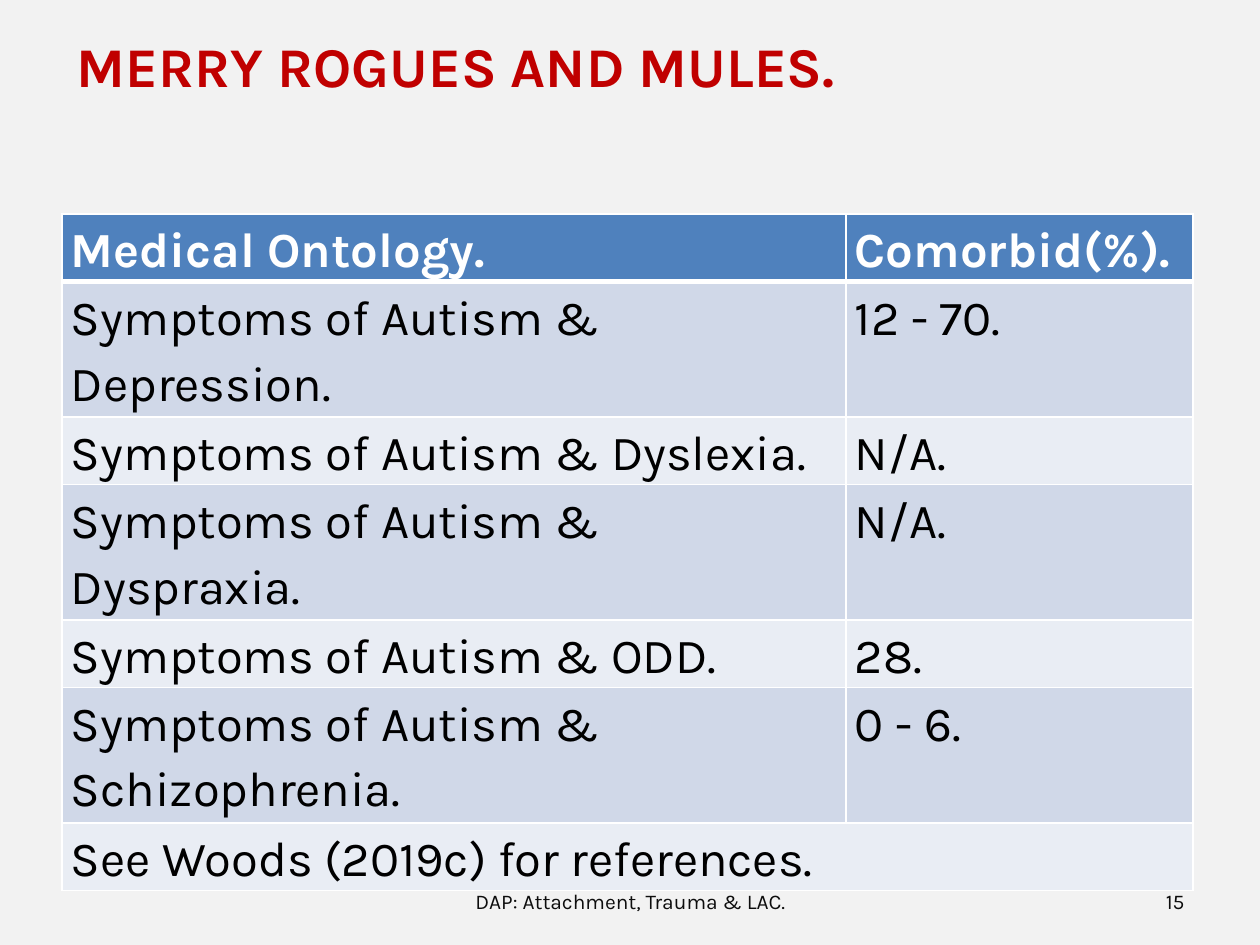
from lxml import etree
from pptx import Presentation
from pptx.dml.color import RGBColor
from pptx.enum.text import MSO_ANCHOR, MSO_AUTO_SIZE, PP_ALIGN
from pptx.oxml.ns import qn
from pptx.util import Emu, Pt

LEFT, CENTER, RIGHT = PP_ALIGN.LEFT, PP_ALIGN.CENTER, PP_ALIGN.RIGHT
TOP, MIDDLE = MSO_ANCHOR.TOP, MSO_ANCHOR.MIDDLE
GROW = MSO_AUTO_SIZE.SHAPE_TO_FIT_TEXT

# Content
TITLE = "MERRY ROGUES AND MULES."
HEADER = ("Medical Ontology.", "Comorbid(%).")
ROWS = [
    ("Symptoms of Autism & Depression.", "12 - 70."),
    ("Symptoms of Autism & Dyslexia.", "N/A."),
    ("Symptoms of Autism & Dyspraxia.", "N/A."),
    ("Symptoms of Autism & ODD.", "28."),
    ("Symptoms of Autism & Schizophrenia.", "0 - 6."),
]
REFERENCE = "See Woods (2019c) for references."
FOOTERS = [  # text, box in px, alignment
    ("DAP: Attachment, Trauma & LAC.", (431, 876, 399, 50), CENTER),
    ("15", (903, 876, 294, 50), RIGHT),
]

# Layout and colours
TITLE_BOX = (64, 25, 1126, 81)
TABLE_BOX = (62, 214, 1131, 541)
COL_WIDTHS = (784, 347)
HEADER_HEIGHT, ROW_HEIGHT = 8, 52
CELL_INSET = 9
FONT = "Karla"
BACKGROUND, RED, INK = "F2F2F2", "C00000", "0D0D0D"
WHITE, BLACK, HEADER_FILL = "FFFFFF", "000000", "4F81BD"
BANDS = ("D0D8E8", "E9EDF4")


def px(n):
    return Emu(round(n * 914400 / 126))


def rgb(value):
    return RGBColor.from_string(value)


def place(s, box):
    s.left, s.top, s.width, s.height = map(px, box)


def write(tf, text, color, size, bold=False, align=LEFT, **para):
    p = tf.paragraphs[0]
    for name, value in {"alignment": align, **para}.items():
        setattr(p, name, value)
    r = p.add_run()
    r.text = text
    for name, value in {"name": FONT, "size": Pt(size), "bold": bold}.items():
        setattr(r.font, name, value)
    r.font.color.rgb = rgb(color)


def set_borders(cell, bottom):
    tcPr = cell._tc.get_or_add_tcPr()
    widths = {"lnL": 1, "lnR": 1, "lnT": 1, "lnB": bottom}
    for i, (tag, width) in enumerate(widths.items()):
        ln = etree.Element(qn(f"a:{tag}"), w=str(Pt(width)))
        fill = etree.SubElement(ln, qn("a:solidFill"))
        etree.SubElement(fill, qn("a:srgbClr"), val=WHITE)
        tcPr.insert(i, ln)


prs = Presentation()
prs.slide_width, prs.slide_height = px(1260), px(945)
slide = prs.slides.add_slide(prs.slide_layouts[5])
slide.background.fill.solid()
slide.background.fill.fore_color.rgb = rgb(BACKGROUND)

# Title
title = slide.shapes.title
place(title, TITLE_BOX)
tf = title.text_frame
tf.vertical_anchor, tf.auto_size = TOP, GROW
write(tf, TITLE, RED, 32, bold=True)

# Table
grid = [HEADER, *ROWS, (REFERENCE, "")]
table = slide.shapes.add_table(len(grid), 2, *map(px, TABLE_BOX)).table
for col, width in zip(table.columns, COL_WIDTHS):
    col.width = px(width)
for i, texts in enumerate(grid):
    head = i == 0
    table.rows[i].height = px(HEADER_HEIGHT if head else ROW_HEIGHT)
    for cell, text in zip(table.rows[i].cells, texts):
        cell.margin_left = cell.margin_right = px(CELL_INSET)
        cell.margin_top = cell.margin_bottom = 0
        cell.fill.solid()
        cell.fill.fore_color.rgb = rgb(HEADER_FILL if head else BANDS[(i - 1) % 2])
        set_borders(cell, bottom=3 if head else 1)
        if text:
            write(cell.text_frame, text, WHITE if head else BLACK, 28, bold=head,
                  line_spacing=1.15, space_after=Pt(10))
last = len(grid) - 1
table.cell(last, 0).merge(table.cell(last, 1))

# Footer and slide number
for text, box, align in FOOTERS:
    tf = slide.shapes.add_textbox(*map(px, box)).text_frame
    tf.word_wrap, tf.vertical_anchor = True, MIDDLE
    write(tf, text, INK, 12, align=align)

prs.save("out.pptx")
